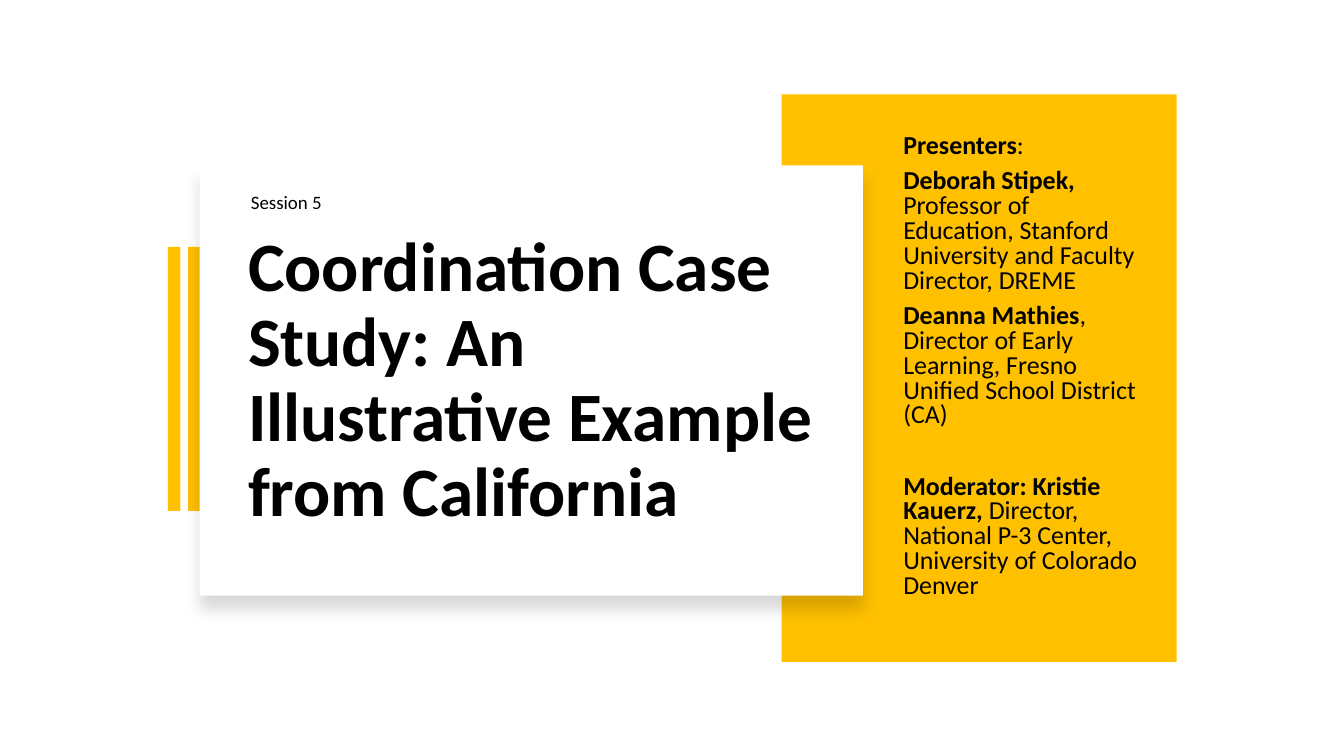
"""Build the title slide of session 5, with its presenters and moderator."""
from dataclasses import dataclass

from lxml.etree import SubElement
from pptx import Presentation
from pptx.dml.color import RGBColor
from pptx.enum.shapes import MSO_SHAPE
from pptx.enum.text import MSO_ANCHOR, MSO_AUTO_SIZE, PP_ALIGN
from pptx.oxml.ns import qn
from pptx.shapes.autoshape import Shape
from pptx.slide import Slide
from pptx.text.text import TextFrame, _Run
from pptx.util import Emu, Inches, Pt

GOLD = RGBColor(0xFF, 0xC0, 0x00)
WHITE = RGBColor(0xFF, 0xFF, 0xFF)
BLACK = RGBColor(0x00, 0x00, 0x00)
FONT = "Calibri"

SLIDE_WIDTH, SLIDE_HEIGHT = Inches(13.33), Inches(7.5)
COLUMN, ROW = SLIDE_WIDTH / 100, SLIDE_HEIGHT / 100


@dataclass(frozen=True)
class Area:
    """A rectangle in hundredths of the slide's width and height."""

    column: float
    row: float
    columns: float
    rows: float

    def box(self) -> tuple[Emu, Emu, Emu, Emu]:
        """Return left, top, width and height."""
        return (Emu(round(self.column * COLUMN)), Emu(round(self.row * ROW)),
                Emu(round(self.columns * COLUMN)), Emu(round(self.rows * ROW)))


@dataclass(frozen=True)
class Panel:
    """A plain filled rectangle."""

    area: Area
    color: RGBColor


@dataclass(frozen=True)
class Credit:
    """A bold name with a regular description and the space above it."""

    name: str
    role: str
    space_before: float = 7.5


TEXT_COLUMN = 17.93
ACCENT_BARS = [Panel(Area(column, 32.67, 0.92, 34.93), GOLD) for column in (12.5, 14)]
CREDITS_PANEL = Panel(Area(58.16, 12.47, 29.4, 75.07), GOLD)
TITLE_CARD = Panel(Area(14.85, 21.87, 49.35, 56.93), WHITE)
TITLE_AREA = Area(TEXT_COLUMN, 28.53, 43.73, 43.87)
SESSION_AREA = Area(TEXT_COLUMN, 24.53, 6.83, 4.4)
CREDITS_AREA = Area(66.68, 16.27, 18.45, 68)

CREDITS = [
    Credit("Presenters", ":"),
    Credit("Deborah Stipek, ",
           "Professor of Education, Stanford University and Faculty Director, DREME"),
    Credit("Deanna Mathies",
           ", Director of Early Learning, Fresno Unified School District (CA)"),
    Credit("Moderator: Kristie Kauerz, ",
           "Director, National P-3 Center, University of Colorado Denver", 33),
]


def draw_panel(slide: Slide, panel: Panel) -> Shape:
    """Draw a filled rectangle without line or shadow."""
    rectangle = slide.shapes.add_shape(MSO_SHAPE.RECTANGLE, *panel.area.box())
    rectangle.shadow.inherit = False
    rectangle.fill.solid()
    rectangle.fill.fore_color.rgb = panel.color
    rectangle.line.fill.background()
    return rectangle


def cast_shadow(card: Shape) -> None:
    """Give the card a soft shadow that falls downwards."""
    effects = card.element.spPr.find(qn("a:effectLst"))
    shadow = SubElement(effects, qn("a:outerShdw"), blurRad=str(Pt(11)),
                        dist=str(Pt(10)), dir="5400000", algn="t", rotWithShape="0")
    color = SubElement(shadow, qn("a:srgbClr"), val=str(BLACK))
    SubElement(color, qn("a:alpha"), val="15000")


def format_run(run: _Run, size: float, bold: bool) -> None:
    """Set the font of a run."""
    run.font.name = FONT
    run.font.size = Pt(size)
    run.font.bold = bold
    run.font.color.rgb = BLACK


def set_frame(frame: TextFrame, bottom: float = 0.04) -> None:
    """Set wrapping, middle anchoring and insets of a text frame."""
    frame.word_wrap = True
    frame.auto_size = MSO_AUTO_SIZE.NONE
    frame.vertical_anchor = MSO_ANCHOR.MIDDLE
    frame.margin_left = frame.margin_right = Inches(0.07)
    frame.margin_top = Inches(0.04)
    frame.margin_bottom = Inches(bottom)


def write_title(slide: Slide) -> None:
    """Fill the title placeholder and raise it above the card."""
    title = slide.shapes.title
    title.left, title.top, title.width, title.height = TITLE_AREA.box()
    set_frame(title.text_frame)
    title.text_frame.text = "Coordination Case Study: An Illustrative Example from California"
    heading = title.text_frame.paragraphs[0]
    heading.alignment = PP_ALIGN.LEFT
    heading.line_spacing = 0.9
    format_run(heading.runs[0], 49.5, True)
    title.element.getparent().append(title.element)


def write_credits(slide: Slide) -> None:
    """List the presenters and the moderator."""
    frame = slide.shapes.add_textbox(*CREDITS_AREA.box()).text_frame
    set_frame(frame, bottom=0.3)
    for index, credit in enumerate(CREDITS):
        paragraph = frame.add_paragraph() if index else frame.paragraphs[0]
        paragraph.line_spacing = 0.8
        paragraph.space_before = Pt(credit.space_before)
        for wording, bold in ((credit.name, True), (credit.role, False)):
            run = paragraph.add_run()
            run.text = wording
            format_run(run, 18.5, bold)


def write_session(slide: Slide) -> None:
    """Write the session number above the title."""
    frame = slide.shapes.add_textbox(*SESSION_AREA.box()).text_frame
    frame.word_wrap = True
    frame.text = "Session 5"
    format_run(frame.paragraphs[0].runs[0], 13.5, False)


def main() -> None:
    """Build and save the slide."""
    presentation = Presentation()
    presentation.slide_width, presentation.slide_height = SLIDE_WIDTH, SLIDE_HEIGHT
    slide = presentation.slides.add_slide(presentation.slide_layouts.get_by_name("Title Only"))
    for panel in (*ACCENT_BARS, CREDITS_PANEL):
        draw_panel(slide, panel)
    cast_shadow(draw_panel(slide, TITLE_CARD))
    write_title(slide)
    write_credits(slide)
    write_session(slide)
    presentation.save("out.pptx")


if __name__ == "__main__":
    main()
